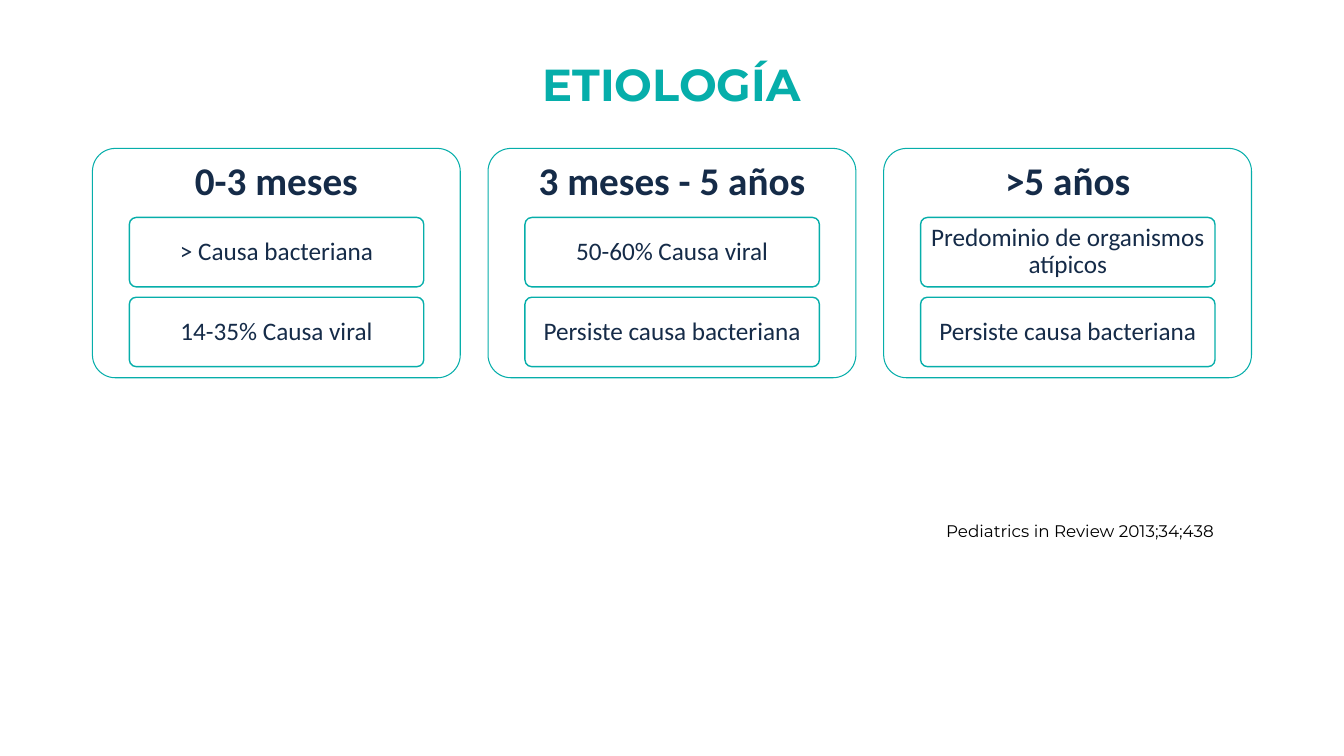
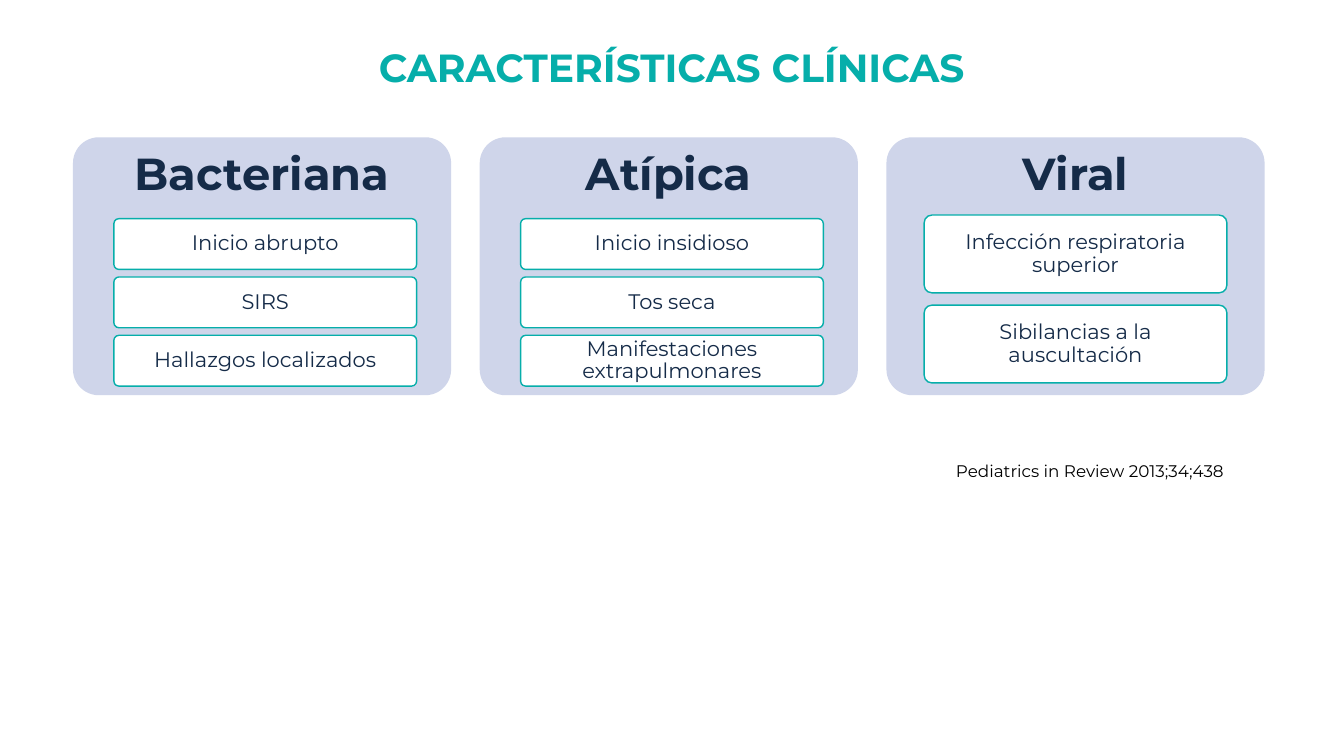
from pptx import Presentation
from pptx.dml.color import RGBColor
from pptx.enum.shapes import MSO_SHAPE as Kind
from pptx.enum.text import MSO_ANCHOR as Anchor, PP_ALIGN as Align
from pptx.util import Cm, Pt

TEAL = RGBColor(0x06, 0xAE, 0xAA)
NAVY = RGBColor(0x15, 0x2B, 0x48)
PALE = RGBColor(0xCF, 0xD5, 0xEA)
WHITE = RGBColor(0xFF, 0xFF, 0xFF)
BLACK = RGBColor(0, 0, 0)
SANS = "Montserrat"
SOURCE = "Pediatrics in Review 2013;34;438"


class Deck:
    def __init__(self):
        self.prs = Presentation()
        self.prs.slide_width = Cm(33.87)
        self.prs.slide_height = Cm(19.05)
        self.slide = None

    def page(self, title, left, top, width, size):
        self.slide = self.prs.slides.add_slide(self.prs.slide_layouts[6])
        self.label(title, (left, top, width, 2.36), size, TEAL, bold=True)

    def put_text(self, shape, text, size, color, font=SANS, bold=False,
                 gap=0.9, pad=(0.25, 0.13)):
        frame = shape.text_frame
        side, end = map(Cm, pad)
        layout = {"word_wrap": True, "vertical_anchor": Anchor.MIDDLE,
                  "margin_left": side, "margin_right": side,
                  "margin_top": end, "margin_bottom": end}
        for name, value in layout.items():
            setattr(frame, name, value)
        para = frame.paragraphs[0]
        para.alignment = Align.CENTER
        para.line_spacing = gap
        run = para.add_run()
        run.text = text
        for name, value in {"name": font, "size": Pt(size), "bold": bold}.items():
            setattr(run.font, name, value)
        run.font.color.rgb = color

    def label(self, text, area, size, color, **style):
        box = self.slide.shapes.add_textbox(*map(Cm, area))
        self.put_text(box, text, size, color, **style)

    def card(self, area, fill, line=None):
        shape = self.slide.shapes.add_shape(Kind.ROUNDED_RECTANGLE, *map(Cm, area))
        shape.shadow.inherit = False
        shape.adjustments[0] = 0.1
        shape.fill.solid()
        shape.fill.fore_color.rgb = fill
        if line:
            shape.line.color.rgb = TEAL
            shape.line.width = Pt(line)
        else:
            shape.line.fill.background()
        return shape

    def panel(self, area, head, items, look, grid):
        left, top, width, height = area
        self.card(area, look["fill"], look["line"])
        self.label(head, (left, top, width, look["head"]), look["big"], NAVY,
                   font=look["font"], bold=True, pad=(0.3, 0.3))
        inset, first, wide, tall, step = grid
        for row, text in enumerate(items):
            item = self.card((left + inset, first + row * step, wide, tall), WHITE, 1)
            self.put_text(item, text, look["small"], NAVY, font=look["font"],
                          pad=look["pad"])

    def cite(self, left, top):
        self.label(SOURCE, (left, top, 12, 0.77), 12, BLACK, gap=1)


def main():
    deck = Deck()

    deck.page("ETIOLOGÍA", 9.8, 1.02, 14.25, 32)
    look = {"fill": WHITE, "line": 0.75, "head": 1.73, "font": "Calibri",
            "big": 28, "small": 18, "pad": (0.12, 0.1)}
    grid = (0.93, 5.48, 7.42, 1.75, 2.01)
    ages = [
        ("0-3 meses", ["> Causa bacteriana", "14-35% Causa viral"]),
        ("3 meses - 5 años", ["50-60% Causa viral", "Persiste causa bacteriana"]),
        (">5 años", ["Predominio de organismos atípicos",
                     "Persiste causa bacteriana"]),
    ]
    for col, (head, items) in enumerate(ages):
        deck.panel((2.33 + col * 9.97, 3.74, 9.27, 5.78), head, items, look, grid)
    deck.cite(21.22, 13)

    deck.page("CARACTERÍSTICAS CLÍNICAS", 8.05, 0.58, 17.75, 28)
    look = {"fill": PALE, "line": None, "head": 1.95, "font": SANS,
            "big": 32, "small": 15, "pad": (0.1, 0.08)}
    three = (1.03, 5.51, 7.63, 1.28, 1.47)
    two = (0.95, 5.42, 7.63, 1.96, 2.27)
    types = [
        ("Bacteriana", ["Inicio abrupto", "SIRS", "Hallazgos localizados"], three),
        ("Atípica", ["Inicio insidioso", "Tos seca",
                     "Manifestaciones extrapulmonares"], three),
        ("Viral", ["Infección respiratoria superior",
                   "Sibilancias a la auscultación"], two),
    ]
    for col, (head, items, grid) in enumerate(types):
        deck.panel((1.84 + col * 10.25, 3.46, 9.53, 6.5), head, items, look, grid)
    deck.cite(21.47, 11.48)

    deck.prs.save("out.pptx")


if __name__ == "__main__":
    main()
